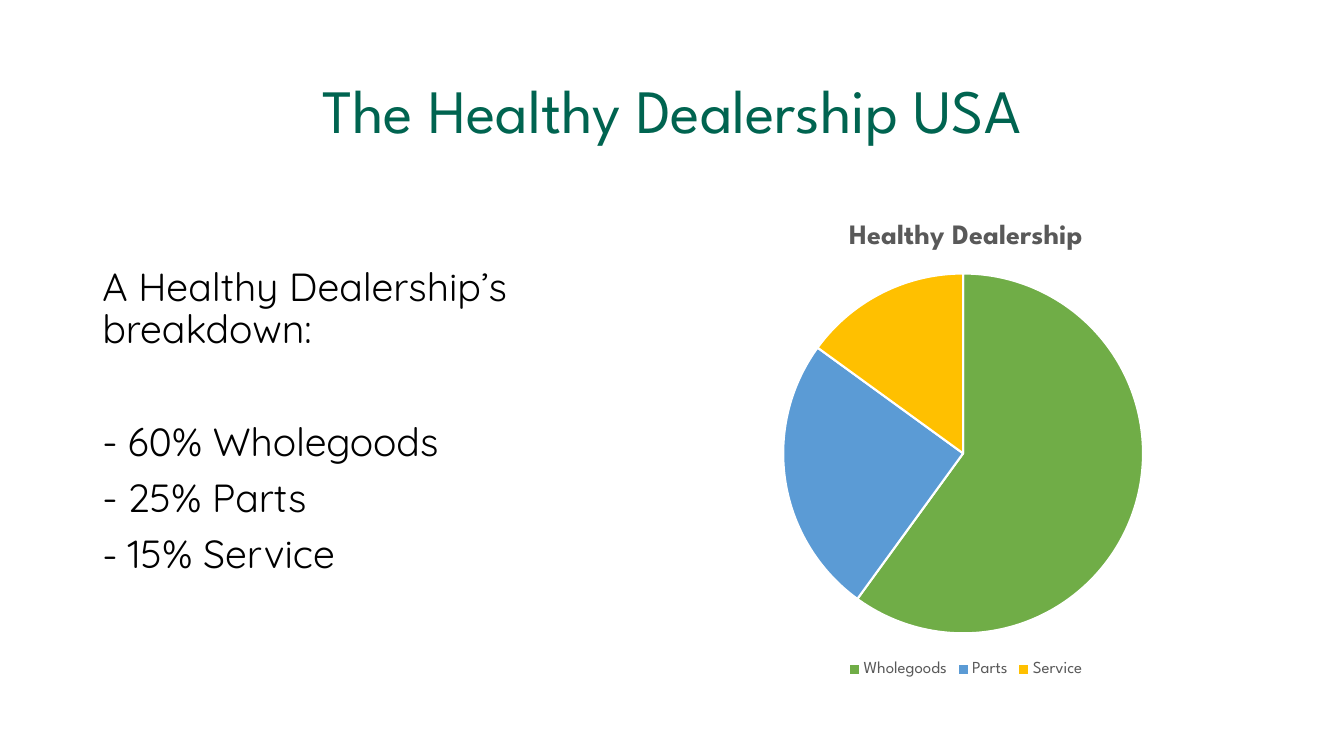
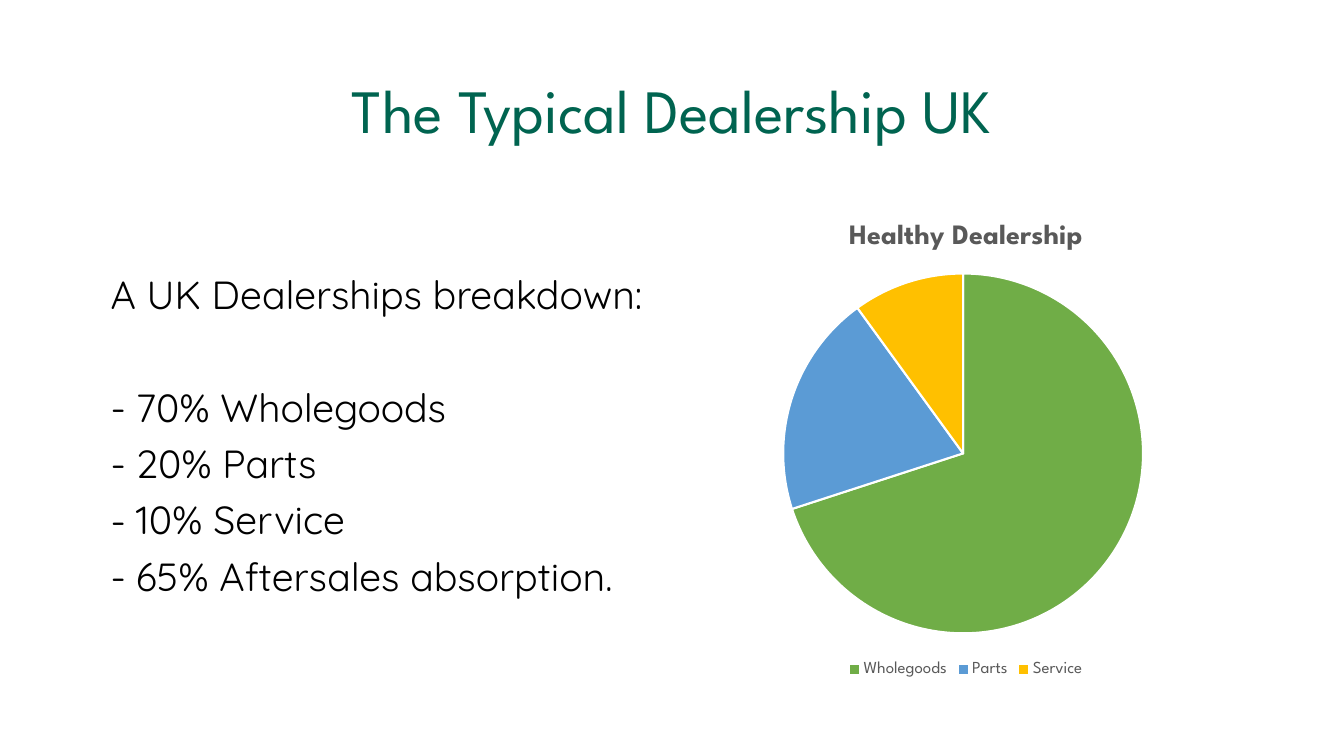
from dataclasses import dataclass

from lxml import etree
from pptx import Presentation
from pptx import util as u
from pptx.chart.data import CategoryChartData
from pptx.dml.color import RGBColor
from pptx.enum import chart as ch
from pptx.enum import text as t
from pptx.oxml import parse_xml
from pptx.oxml.ns import nsdecls, qn

Pt = u.Pt


@dataclass(frozen=True)
class Theme:
    heading_font: str = "League Spartan"
    body_font: str = "Quicksand"
    green: str = "006450"
    black: str = "000000"
    grey: str = "595959"
    white: str = "FFFFFF"
    slices: tuple = ("70AD47", "5B9BD5", "FFC000")
    title_size: int = 44
    body_size: int = 28
    chart_title_size: int = 20
    legend_size: int = 12
    line_spacing: float = 0.9
    item_gap: int = 10
    list_gap: int = 50
    bullet_indent: int = 18


THEME = Theme()
SLIDE_SIZE = (960, 540)
TITLE_BOX = (66, 28.8, 828, 104.4)
CHART_BOX = (486, 144, 408, 342.72)
PIE_AREA = {"x": 0.18, "y": 0.15, "w": 0.63, "h": 0.75}
DEPARTMENTS = ("Wholegoods", "Parts", "Service")


def points(box):
    return [Pt(value) for value in box]


def style(font, *, name, size, color, bold=False):
    font.name, font.size, font.bold = name, Pt(size), bold
    font.color.rgb = RGBColor.from_string(color)


def write(paragraph, wording, *, align=t.PP_ALIGN.LEFT, before=0, bullet=None,
          spacing=THEME.line_spacing, **font):
    paragraph.alignment = align
    paragraph.line_spacing = spacing
    paragraph.space_before = Pt(before)
    if bullet:
        props = paragraph._p.get_or_add_pPr()
        indent = Pt(THEME.bullet_indent)
        props.set("marL", str(indent))
        props.set("indent", str(-indent))
        etree.SubElement(props, qn("a:buFont")).set("typeface", THEME.body_font)
        etree.SubElement(props, qn("a:buChar")).set("char", bullet)
    run = paragraph.add_run()
    run.text = wording
    style(run.font, **font)


def add_title(slide, box, wording):
    title = slide.shapes.title
    title.left, title.top, title.width, title.height = points(box)
    title.text_frame.vertical_anchor = t.MSO_ANCHOR.MIDDLE
    write(title.text_frame.paragraphs[0], wording, align=t.PP_ALIGN.CENTER,
          name=THEME.heading_font, size=THEME.title_size, color=THEME.green)


def add_breakdown(slide, box, lead, items):
    frame = slide.shapes.add_textbox(*points(box)).text_frame
    frame.word_wrap = True
    body = dict(name=THEME.body_font, size=THEME.body_size, color=THEME.black)
    write(frame.paragraphs[0], lead, **body)
    for index, item in enumerate(items):
        write(frame.add_paragraph(), item, bullet="-",
              before=THEME.item_gap if index else THEME.list_gap, **body)


def fix_pie_area(chart, area):
    """Pin the pie to fractions of the chart frame."""
    plot_area = chart._chartSpace.chart.plotArea
    for layout in plot_area.findall(qn("c:layout")):
        plot_area.remove(layout)
    places = "".join(f'<c:{key} val="{value}"/>' for key, value in area.items())
    plot_area.insert(0, parse_xml(
        f'<c:layout {nsdecls("c")}><c:manualLayout><c:layoutTarget val="inner"/>'
        f'<c:xMode val="edge"/><c:yMode val="edge"/>{places}'
        f'</c:manualLayout></c:layout>'))


def add_pie(slide, box, heading, shares):
    data = CategoryChartData()
    data.categories = DEPARTMENTS
    data.add_series("Series 1", shares)
    chart = slide.shapes.add_chart(ch.XL_CHART_TYPE.PIE, *points(box), data).chart
    label = dict(name=THEME.heading_font, color=THEME.grey)
    style(chart.font, size=THEME.legend_size, **label)

    chart.has_title = True
    write(chart.chart_title.text_frame.paragraphs[0], heading, spacing=1,
          align=t.PP_ALIGN.CENTER, size=THEME.chart_title_size, bold=True, **label)
    chart.chart_title.include_in_layout = False

    chart.has_legend = True
    chart.legend.position = ch.XL_LEGEND_POSITION.BOTTOM
    chart.legend.include_in_layout = False
    style(chart.legend.font, size=THEME.legend_size, **label)

    pie = chart.plots[0]
    pie.vary_by_categories = True
    for index, color in enumerate(THEME.slices):
        wedge = pie.series[0].points[index].format
        wedge.fill.solid()
        wedge.fill.fore_color.rgb = RGBColor.from_string(color)
        wedge.line.color.rgb = RGBColor.from_string(THEME.white)
        wedge.line.width = Pt(1.5)
    fix_pie_area(chart, PIE_AREA)


def add_dealership_slide(deck, title, lead, breakdown_box, shares, extras=()):
    slide = deck.slides.add_slide(deck.slide_layouts[5])
    items = [f"{share}% {name}" for share, name in zip(shares, DEPARTMENTS)]
    add_title(slide, TITLE_BOX, title)
    add_breakdown(slide, breakdown_box, lead, [*items, *extras])
    add_pie(slide, CHART_BOX, "Healthy Dealership", shares)


def main():
    deck = Presentation()
    deck.slide_width, deck.slide_height = points(SLIDE_SIZE)
    add_dealership_slide(deck, "The Healthy Dealership USA",
                         "A Healthy Dealership’s breakdown:",
                         (66, 187.5, 420, 299), (60, 25, 15))
    add_dealership_slide(deck, "The Typical Dealership UK",
                         "A UK Dealerships breakdown:",
                         (72, 193.5, 408, 299), (70, 20, 10),
                         extras=["65% Aftersales absorption."])
    deck.save("out.pptx")


if __name__ == "__main__":
    main()
